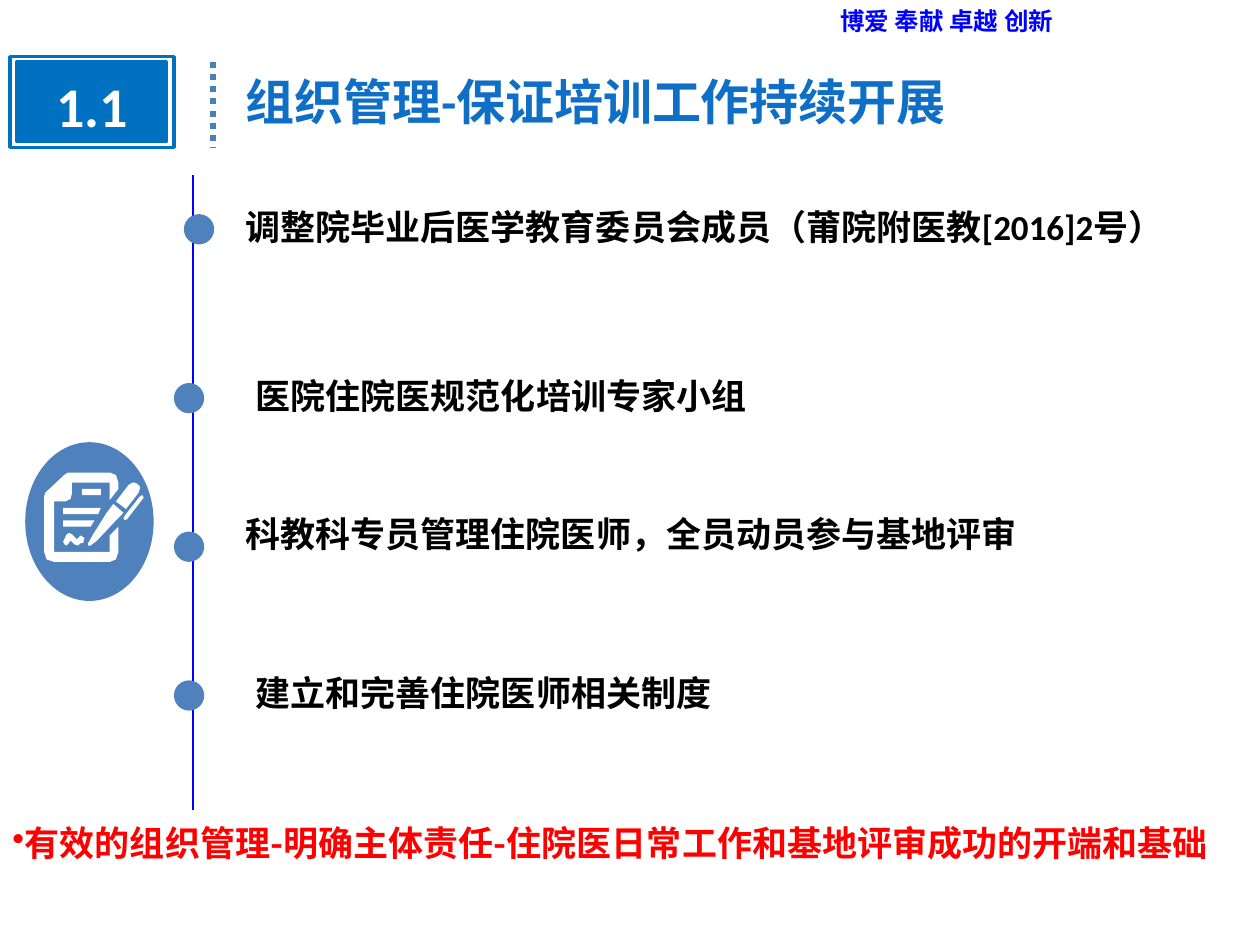
import pptx
import pptx.dml.color
import pptx.enum.dml
import pptx.enum.shapes
import pptx.enum.text
import pptx.oxml
import pptx.oxml.ns
import pptx.util

Pt = pptx.util.Pt
RGB = pptx.dml.color.RGBColor.from_string
MSO = pptx.enum.shapes.MSO_SHAPE
qn = pptx.oxml.ns.qn

THEME = {
    "latin": "Calibri", "cjk": "Noto Sans CJK SC",
    "white": "FFFFFF", "black": "000000", "badge": "0070C0", "title": "0F6FC6",
    "accent": "4F81BD", "dots": "4B7EBC", "blue": "0000FF", "red": "FF0000",
    "motto_size": 14, "body_size": 20, "title_size": 28, "number_size": 32,
}

prs = pptx.Presentation()
prs.slide_width, prs.slide_height = Pt(720), Pt(540)
s = prs.slides.add_slide(prs.slide_layouts[5])


def paint(sp, fill, line=None):
    sp.shadow.inherit = False
    sp.fill.solid()
    sp.fill.fore_color.rgb = RGB(THEME[fill])
    if line:
        sp.line.color.rgb = RGB(THEME[line])
        sp.line.width = Pt(2)
    else:
        sp.line.fill.background()


def write(sp, box, text, size, color, font="latin", wrap=True, spacing=1.0):
    """Place a text shape and fill it with one bold paragraph."""
    sp.left, sp.top, sp.width, sp.height = map(Pt, box)
    tf = sp.text_frame
    tf.word_wrap = wrap
    tf.vertical_anchor = pptx.enum.text.MSO_ANCHOR.TOP
    tf.text = text
    p = tf.paragraphs[0]
    p.alignment = pptx.enum.text.PP_ALIGN.LEFT
    p.line_spacing = spacing
    r = p.runs[0]
    r.font.size, r.font.bold = Pt(THEME[size]), True
    r.font.color.rgb = RGB(THEME[color])
    r.font.name = THEME[font]
    ea = pptx.oxml.parse_xml(
        '<a:ea xmlns:a="http://schemas.openxmlformats.org/drawingml/2006/main"/>')
    ea.set("typeface", THEME["cjk"])
    r.font._element.find(qn("a:latin")).addnext(ea)
    return p


# Header: number badge, dotted divider, title and motto
for box, fill in (((5.8, 32.4, 93.6, 51.8), "white"), ((9.4, 35.3, 85.7, 45.4), "badge")):
    sp = s.shapes.add_shape(MSO.RECTANGLE, *map(Pt, box))
    paint(sp, fill, "badge")
write(s.shapes.add_textbox(0, 0, 0, 0), (25.2, 37.4, 55.4, 45.4),
      "1.1", "number_size", "white", wrap=False)
write(s.shapes.title, (133.2, 37.4, 499, 41),
      "组织管理-保证培训工作持续开展", "title_size", "title")
p = write(s.shapes.add_textbox(0, 0, 0, 0), (473, 0, 247, 28.8),
          "博爱 奉献 卓越 创新", "motto_size", "blue")
p.alignment = pptx.enum.text.PP_ALIGN.JUSTIFY

# Header divider and timeline axis
for x, top, bottom, color, width, dash in (
        (121.7, 35.3, 84.2, "dots", 3.5, pptx.enum.dml.MSO_LINE.ROUND_DOT),
        (110.2, 100.1, 463, "blue", 1.5, None)):
    line = s.shapes.add_connector(
        pptx.enum.shapes.MSO_CONNECTOR.STRAIGHT, Pt(x), Pt(top), Pt(x), Pt(bottom))
    line.line.color.rgb = RGB(THEME[color])
    line.line.width = Pt(width)
    if dash:
        line.line.dash_style = dash
    line._element.spPr.append(pptx.oxml.parse_xml(
        '<a:effectLst xmlns:a="http://schemas.openxmlformats.org/drawingml/2006/main"/>'))

# Timeline: dot position, then text box and wording
DOT = 17.3
milestones = [
    (105.1, 122.4, (133.2, 116.6, 544.3, 55.4),
     "调整院毕业后医学教育委员会成员（莆院附医教[2016]2号）", True),
    (99.4, 218.9, (139, 213.1, 391, 55.4), "医院住院医规范化培训专家小组", True),
    (99.4, 303.8, (133.2, 292.3, 493.2, 55.4),
     "科教科专员管理住院医师，全员动员参与基地评审", True),
    (99.4, 388.8, (139, 383, 276.5, 28.8), "建立和完善住院医师相关制度", False),
]
for x, y, box, text, wrap in milestones:
    dot = s.shapes.add_shape(MSO.OVAL, Pt(x), Pt(y), Pt(DOT), Pt(DOT))
    paint(dot, "accent")
    write(s.shapes.add_textbox(0, 0, 0, 0), box, text, "body_size", "black",
          wrap=wrap, spacing=0.9)

# Document-and-pen icon, contours in hundredths of an inch
disc = s.shapes.add_shape(MSO.OVAL, Pt(14.4), Pt(252.7), Pt(73.4), Pt(90.7))
paint(disc, "accent")
page = [(54, 375), (87, 375), (92, 377), (94, 383), (94, 388), (87, 397), (87, 383),
        (57, 383), (57, 392), (56, 396), (52, 398), (43, 398), (43, 438), (87, 438),
        (87, 425), (94, 418), (94, 438), (92, 444), (87, 446), (43, 446), (37, 444),
        (35, 438), (35, 394), (36, 391), (51, 377)]
signature = [(55, 423), (57, 424), (61, 428), (64, 425), (67, 427), (66, 431),
             (64, 431), (62, 433), (59, 432), (56, 429), (54, 432), (52, 433),
             (50, 430), (53, 424)]
nib = [(90, 400), (98, 407), (94, 411), (77, 429), (72, 433), (70, 433), (70, 431),
       (74, 424), (84, 408)]
barrel = [(107, 383), (109, 384), (111, 386), (111, 388), (110, 391), (100, 404),
          (92, 398), (102, 385), (105, 383)]
clip = [(113, 393), (114, 395), (104, 408), (101, 412), (99, 413), (98, 411),
        (100, 408), (111, 394)]
text_lines = [[(left, top), (right, top), (end, top + 5), (left, top + 5)]
              for left, top, right, end in
              ((65, 388, 80, 80), (50, 403, 80, 78), (50, 413, 75, 72))]
contours = [page, signature, nib, barrel, clip] + text_lines
fb = s.shapes.build_freeform(*page[0], scale=Pt(0.72))
for i, contour in enumerate(contours):
    if i:
        fb.move_to(*contour[0])
    fb.add_line_segments(contour[1:], close=True)
paint(fb.convert_to_shape(), "white")

# Closing statement
p = write(s.shapes.add_textbox(0, 0, 0, 0), (0, 468.7, 1110.2, 28.8),
          "有效的组织管理-明确主体责任-住院医日常工作和基地评审成功的开端和基础",
          "body_size", "red", font="cjk", spacing=0.9)
bullet = pptx.oxml.parse_xml(
    '<a:buChar xmlns:a="http://schemas.openxmlformats.org/drawingml/2006/main" char="•"/>')
p._p.get_or_add_pPr().append(bullet)

prs.save("out.pptx")
